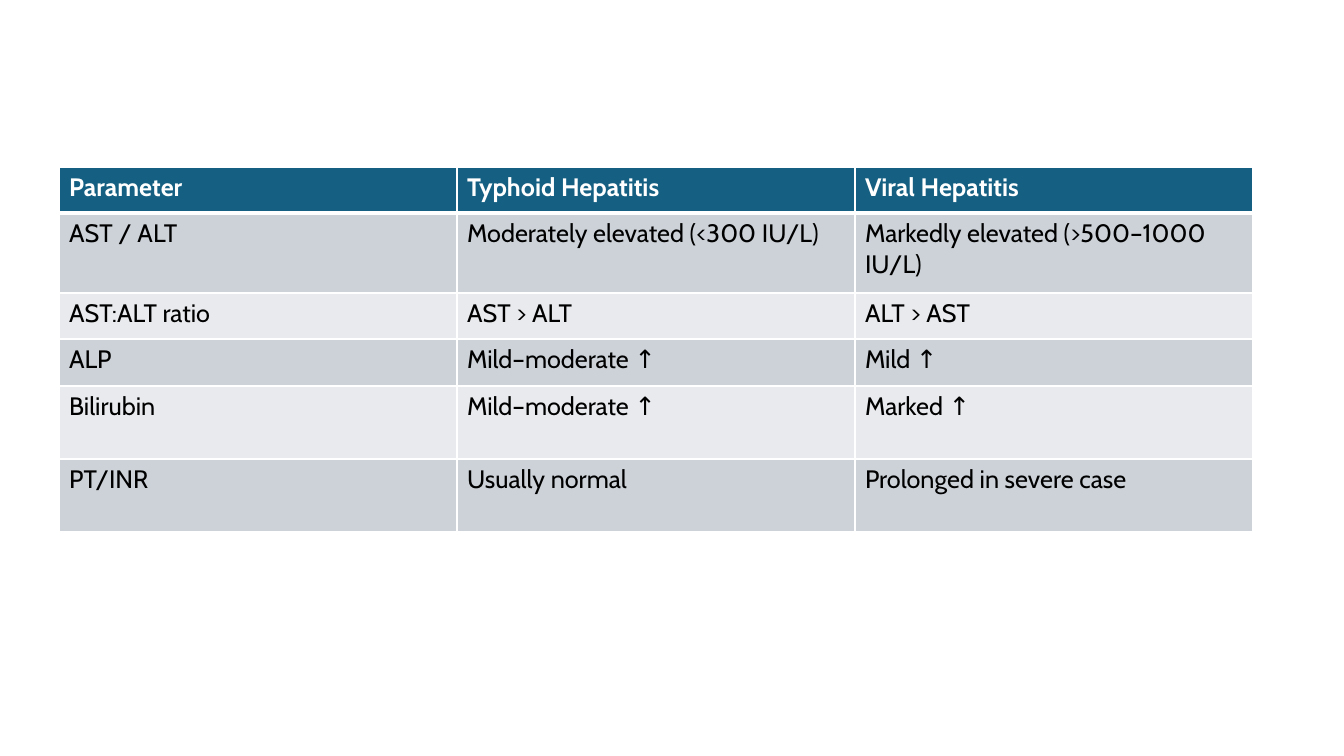
from lxml.etree import SubElement
from pptx import Presentation
from pptx.dml.color import RGBColor
from pptx.oxml.ns import qn
from pptx.util import Pt

PX = 914400 / 100.8  # EMU in one px
WHITE, BLACK, TEAL = "FFFFFF", "000000", "156082"
BANDS = ["CCD2D8", "E8EAED"]

ROWS = [
    ("Parameter", "Typhoid Hepatitis", "Viral Hepatitis"),
    ("AST / ALT", "Moderately elevated (<300 IU/L)", "Markedly elevated (>500–1000 IU/L)"),
    ("AST:ALT ratio", "AST > ALT", "ALT > AST"),
    ("ALP", "Mild–moderate ↑", "Mild ↑"),
    ("Bilirubin", "Mild–moderate ↑", "Marked ↑"),
    ("PT/INR", "Usually normal", "Prolonged in severe case"),
]
ROW_HEIGHTS = [46, 80, 46, 47, 73, 73]
COLUMN_WIDTH = 398


def px(length):
    return round(length * PX)


def paint(color_format, color):
    color_format.rgb = RGBColor.from_string(color)


# Slide
deck = Presentation()
deck.slide_width, deck.slide_height = px(1344), px(756)
page = deck.slides.add_slide(deck.slide_layouts[6])

# Table grid
column_count = len(ROWS[0])
table = page.shapes.add_table(
    len(ROWS), column_count, px(59), px(167),
    px(COLUMN_WIDTH * column_count), px(sum(ROW_HEIGHTS))).table
for column in table.columns:
    column.width = px(COLUMN_WIDTH)
for row, height in zip(table.rows, ROW_HEIGHTS):
    row.height = px(height)

# Cells: header row, then alternating bands
for row_index, texts in enumerate(ROWS):
    is_header = row_index == 0
    fill_color = TEAL if is_header else BANDS[(row_index - 1) % 2]
    edges = {"a:lnL": 1, "a:lnR": 1,
             "a:lnT": 3 if row_index == 1 else 1,
             "a:lnB": 3 if is_header else 1}
    for column_index, text in enumerate(texts):
        cell = table.cell(row_index, column_index)

        # Borders come before the fill in the cell properties
        properties = cell._tc.get_or_add_tcPr()
        for edge, points in edges.items():
            line = SubElement(properties, qn(edge), w=str(Pt(points)))
            line_fill = SubElement(line, qn("a:solidFill"))
            SubElement(line_fill, qn("a:srgbClr"), val=WHITE)
        cell.fill.solid()
        paint(cell.fill.fore_color, fill_color)

        cell.text = text
        font = cell.text_frame.paragraphs[0].font
        font.name, font.size, font.bold = "Cabin", Pt(18), is_header
        paint(font.color, WHITE if is_header else BLACK)

deck.save("out.pptx")
